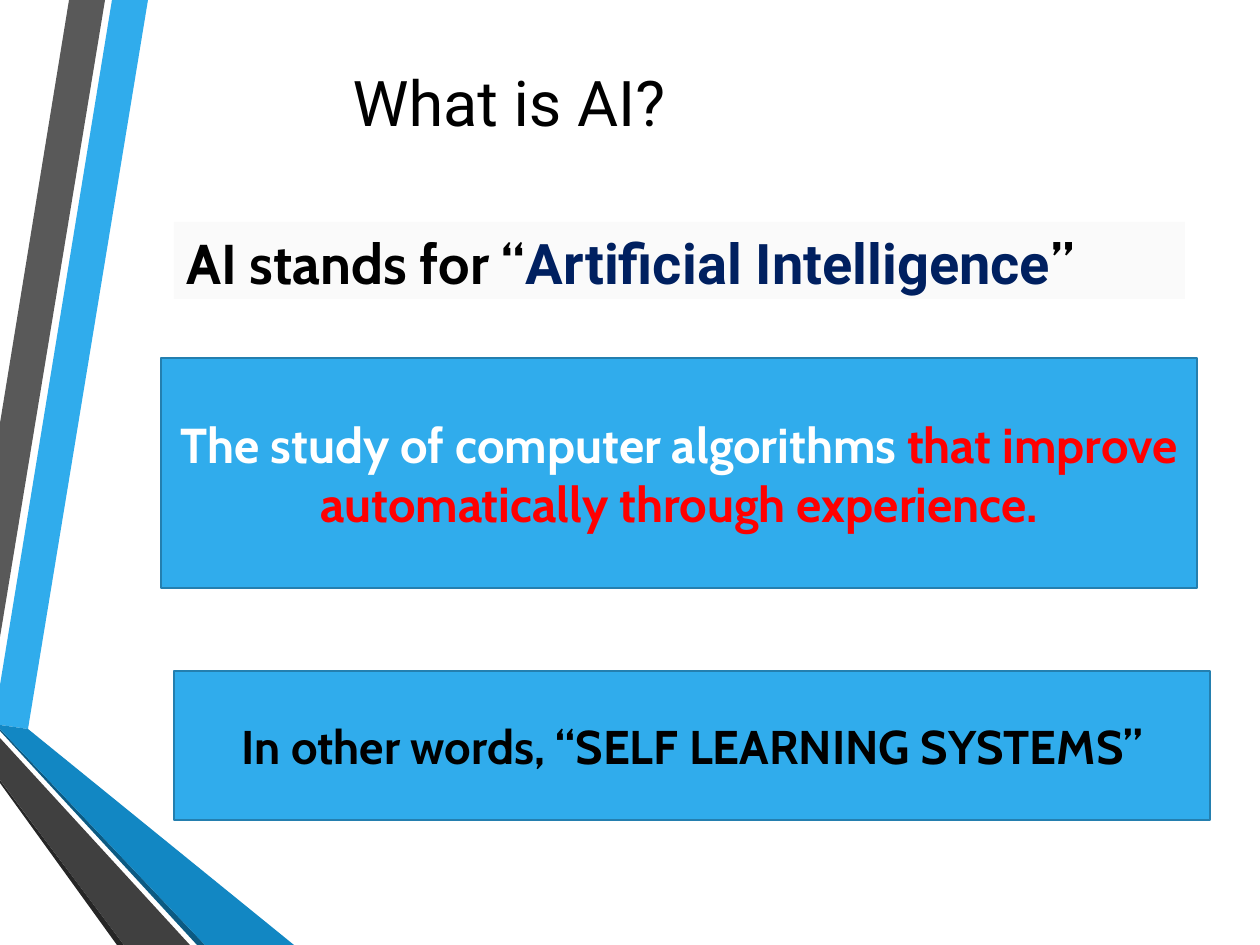
from lxml.etree import SubElement
from pptx import Presentation
from pptx.dml.color import RGBColor
from pptx.enum.shapes import MSO_SHAPE
from pptx.enum.text import MSO_ANCHOR, MSO_AUTO_SIZE, PP_ALIGN
from pptx.oxml.ns import qn
from pptx.util import Emu, Pt

SCALE = 914400 / 126  # EMU in one px

WHITE = RGBColor(0xFF, 0xFF, 0xFF)
BLACK = RGBColor(0, 0, 0)
RED = RGBColor(0xFF, 0, 0)
NAVY = RGBColor(0, 0x20, 0x60)
SKY = RGBColor(0x30, 0xAC, 0xEC)
EDGE = RGBColor(0x24, 0x7F, 0xAF)
BLUE = RGBColor(0x12, 0x87, 0xC3)
DEEP = RGBColor(0x0C, 0x5A, 0x82)
SILVER = RGBColor(0xA6, 0xA6, 0xA6)
GRAY = RGBColor(0x59, 0x59, 0x59)
DARK = RGBColor(0x40, 0x40, 0x40)
COAL = RGBColor(0x26, 0x26, 0x26)

RIBBONS = [
    (SKY, [(0, 685), (0, 725), (28, 729), (148, 0), (112, 0)]),
    (GRAY, [(105, 0), (69, 0), (0, 423), (0, 637)]),
    (COAL, [(0, 780), (0, 783), (117, 945), (124, 945)]),
    (DEEP, [(0, 729), (0, 731), (197, 945), (205, 945)]),
    (BLUE, [(0, 729), (205, 945), (294, 945), (28, 729), (0, 725)]),
    (DARK, [(0, 780), (124, 945), (190, 945), (0, 738)]),
]


def px(n):
    return Emu(round(n * SCALE))


def fade(fill, alpha):
    """Give a solid fill an opacity in percent."""
    color = fill._xPr.find(qn("a:solidFill"))[0]
    SubElement(color, qn("a:alpha"), val=str(alpha * 1000))


def write(shape, runs, size, font="Cabin", bold=True,
          align=PP_ALIGN.CENTER, anchor=MSO_ANCHOR.MIDDLE):
    """Fill a shape with runs of (text, colour) or (text, colour, font)."""
    frame = shape.text_frame
    frame.word_wrap = True
    frame.auto_size = MSO_AUTO_SIZE.NONE
    frame.vertical_anchor = anchor
    para = frame.paragraphs[0]
    para.alignment = align
    for text, color, *face in runs:
        run = para.add_run()
        run.text = text
        run.font.name = face[0] if face else font
        run.font.size = Pt(size)
        run.font.bold = bold
        run.font.color.rgb = color


class Deck:
    """Holds the slide and the style of its elements."""

    def __init__(self):
        self.prs = Presentation()
        self.prs.slide_width, self.prs.slide_height = px(1260), px(945)
        self.slide = self.prs.slides.add_slide(self.prs.slide_layouts[5])

    def title(self, box, text):
        shape = self.slide.shapes.title
        shape.left, shape.top, shape.width, shape.height = map(px, box)
        write(shape, [(text, BLACK)], 36, font="Roboto", bold=False)

    def ribbon(self, color, points):
        form = self.slide.shapes.build_freeform(*points[0], scale=SCALE)
        form.add_line_segments(points[1:], close=True)
        shape = form.convert_to_shape()
        shape.shadow.inherit = False
        shape.fill.solid()
        shape.fill.fore_color.rgb = color
        shape.line.fill.background()

    def panel(self, box, runs, size, fill=SKY, line=EDGE, width=1.25, **style):
        shape = self.slide.shapes.add_shape(MSO_SHAPE.RECTANGLE, *map(px, box))
        shape.shadow.inherit = False
        shape.fill.solid()
        shape.fill.fore_color.rgb = fill
        shape.line.color.rgb = line
        shape.line.width = Pt(width)
        write(shape, runs, size, **style)
        return shape


def main():
    deck = Deck()
    for color, points in RIBBONS:
        deck.ribbon(color, points)
    deck.title((73, 63, 872, 77), "What is AI?")
    deck.panel((161, 358, 1036, 230), [
        ("The study of computer algorithms ", WHITE),
        ("that improve automatically through experience.", RED)], 28)
    deck.panel((174, 671, 1036, 149),
               [("In other words, “SELF LEARNING SYSTEMS”", BLACK)], 27)
    lead = deck.panel((174, 222, 1011, 77), [
        ("AI stands for “", BLACK),
        ("Artificial Intelligence", NAVY, "Roboto"),
        ("”", BLACK)], 32, fill=SILVER, line=WHITE, width=0.25,
        align=PP_ALIGN.LEFT, anchor=MSO_ANCHOR.TOP)
    fade(lead.fill, 5)
    fade(lead.line.fill, 20)
    deck.prs.save("out.pptx")


if __name__ == "__main__":
    main()
